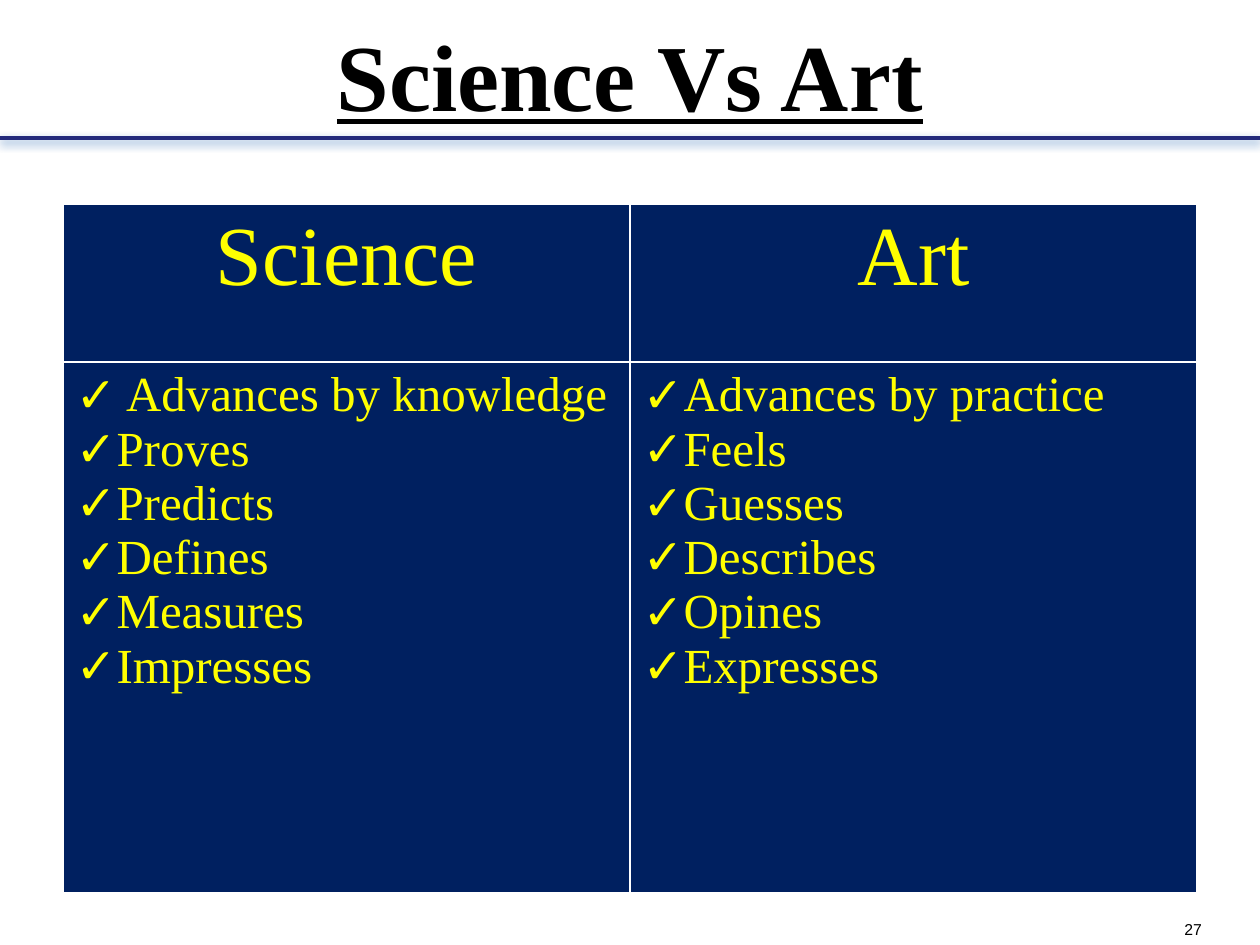
from lxml import etree
from pptx import Presentation
from pptx import util as u
from pptx.dml.color import RGBColor
from pptx.enum import shapes, text
from pptx.oxml.ns import qn

PX_PER_INCH = 126
SLIDE_W, SLIDE_H = 1260, 945
SERIF, SANS = "Times New Roman", "Arial"
NAVY, YELLOW, WHITE, BLACK = "002060", "FFFF00", "FFFFFF", "000000"
RULE, RULE_SHADOW = "242A7B", "5B8DC6"

COMPARISON = {
    "Science": [" Advances by knowledge", "Proves", "Predicts",
                "Defines", "Measures", "Impresses"],
    "Art": ["Advances by practice", "Feels", "Guesses",
            "Describes", "Opines", "Expresses"],
}


def px(n):
    return u.Emu(round(n * 914400 / PX_PER_INCH))


def rgb(code):
    return RGBColor.from_string(code)


def add_xml(parent, tag, **attributes):
    return etree.SubElement(parent, qn(tag), attributes)


def style(paragraph, font_name, size, color, align):
    paragraph.alignment = align
    for run in paragraph.runs:
        run.font.name = font_name
        run.font.size = u.Pt(size)
        run.font.color.rgb = rgb(color)


def add_label(slide, box, words, font_name, size, align, pad=0, wrap=True):
    label = slide.shapes.add_textbox(*map(px, box))
    frame = label.text_frame
    frame.word_wrap = wrap
    frame.vertical_anchor = text.MSO_ANCHOR.BOTTOM
    frame.margin_left = frame.margin_right = 0
    frame.margin_top = frame.margin_bottom = px(pad)
    frame.text = words
    style(frame.paragraphs[0], font_name, size, BLACK, align)
    return frame.paragraphs[0].runs[0].font


def add_header(slide, left, top, width, height):
    # Heading rule with a soft shadow
    rule_y = px(top + height)
    rule = slide.shapes.add_connector(
        shapes.MSO_CONNECTOR.STRAIGHT, px(left + width), rule_y, px(left), rule_y)
    rule.line.color.rgb = rgb(RULE)
    rule.line.width = u.Pt(2.25)
    effects = add_xml(rule._element.spPr, "a:effectLst")
    shadow = add_xml(effects, "a:outerShdw", blurRad=str(u.Pt(5)),
                     dist=str(u.Pt(2.1)), dir="5400000", rotWithShape="0")
    shade = add_xml(shadow, "a:srgbClr", val=RULE_SHADOW)
    add_xml(shade, "a:alpha", val="75000")

    # Title
    title_font = add_label(slide, (left + 58, top + 22, width - 116, height - 24),
                           "Science Vs Art", SERIF, 54, text.PP_ALIGN.CENTER, pad=6)
    title_font.bold = title_font.underline = True


def format_cell(cell):
    cell_props = cell._tc.get_or_add_tcPr()
    for side in ("a:lnL", "a:lnR", "a:lnT", "a:lnB"):
        border = add_xml(cell_props, side, w=str(u.Pt(1)))
        border_fill = add_xml(border, "a:solidFill")
        add_xml(border_fill, "a:srgbClr", val=WHITE)
    cell.fill.solid()
    cell.fill.fore_color.rgb = rgb(NAVY)


def add_comparison(slide, left, top, width, header_height, body_height):
    table = slide.shapes.add_table(
        2, len(COMPARISON), px(left), px(top), px(width),
        px(header_height + body_height)).table
    table.rows[0].height = px(header_height)
    table.rows[1].height = px(body_height)
    for column, (heading, traits) in enumerate(COMPARISON.items()):
        table.columns[column].width = px(width / len(COMPARISON))
        heading_cell, traits_cell = table.cell(0, column), table.cell(1, column)
        for cell in (heading_cell, traits_cell):
            format_cell(cell)
        heading_cell.text_frame.text = heading
        style(heading_cell.text_frame.paragraphs[0], SERIF, 48, YELLOW,
              text.PP_ALIGN.CENTER)
        traits_cell.text_frame.text = "\n".join(traits)
        for trait in traits_cell.text_frame.paragraphs:
            trait_props = trait._p.get_or_add_pPr()
            trait_props.set("marL", "0")
            trait_props.set("indent", "0")
            add_xml(trait_props, "a:buFont", typeface=SANS)
            add_xml(trait_props, "a:buChar", char="✓")
            style(trait, SERIF, 28, YELLOW, text.PP_ALIGN.LEFT)


def main():
    deck = Presentation()
    deck.slide_width, deck.slide_height = px(SLIDE_W), px(SLIDE_H)
    slide = deck.slides.add_slide(deck.slide_layouts[6])

    add_header(slide, 0, 0, SLIDE_W, 138)
    add_comparison(slide, 63, 204, 1134, 158, 531)
    # Slide number
    add_label(slide, (1178, 920, 24, 19), "27", SANS, 9,
              text.PP_ALIGN.RIGHT, wrap=False)

    deck.save("out.pptx")


if __name__ == "__main__":
    main()
